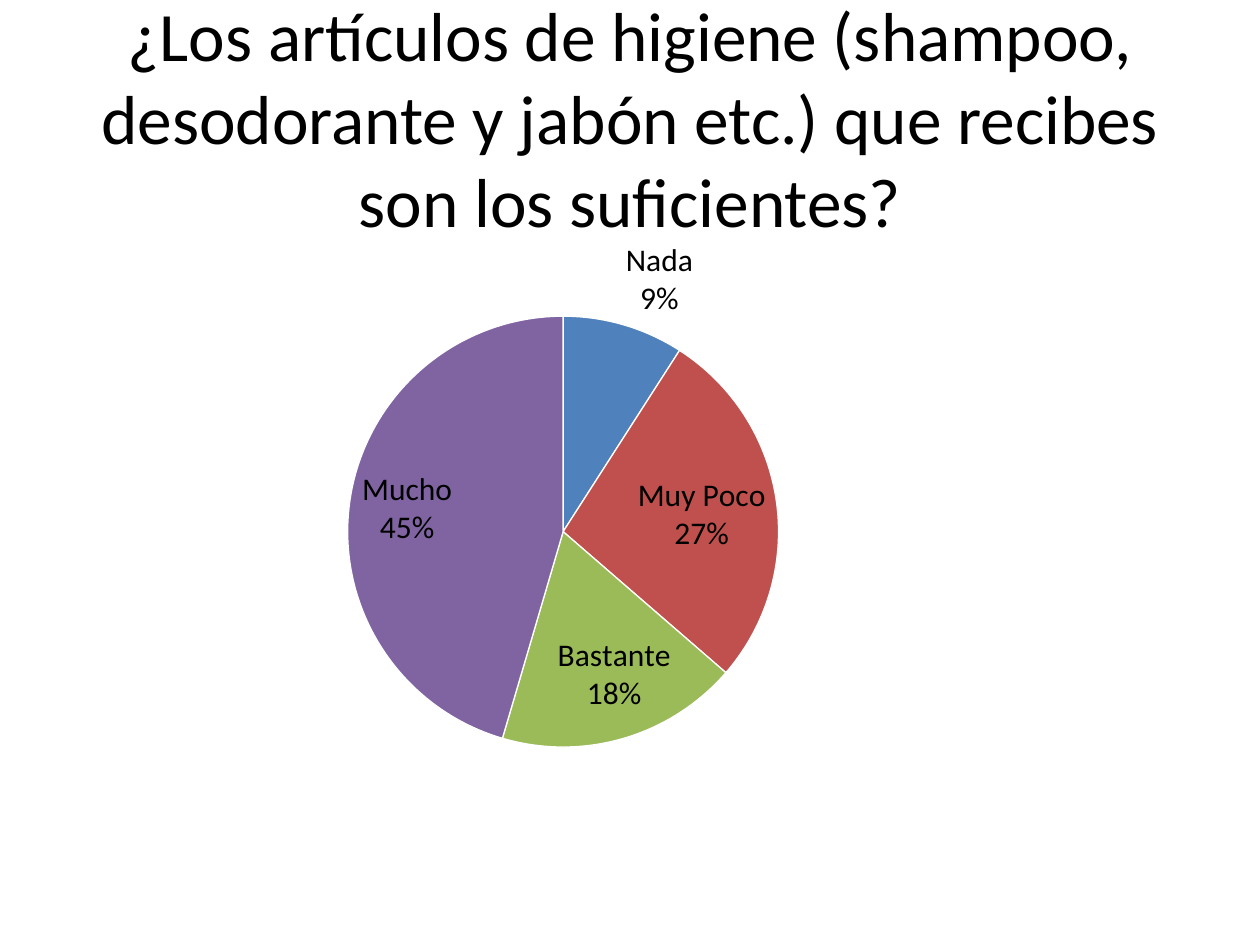
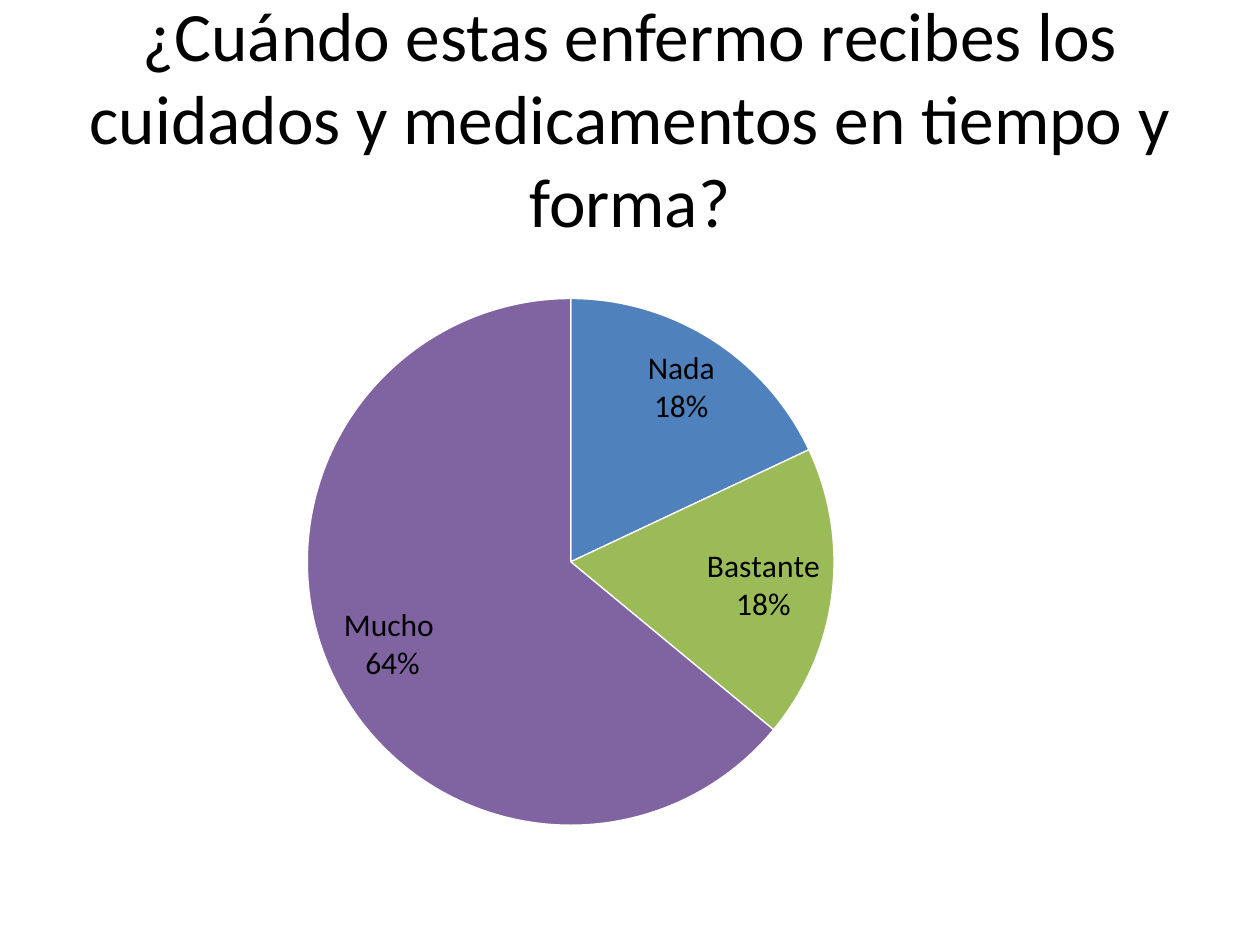
"""Build two survey slides, each a question over a pie chart of its answers."""
from dataclasses import dataclass
from typing import Any

from lxml import etree
from pptx import Presentation
from pptx.chart.data import CategoryChartData
from pptx.dml.color import RGBColor
from pptx.enum.chart import XL_CHART_TYPE, XL_LABEL_POSITION
from pptx.enum.text import MSO_ANCHOR, PP_ALIGN
from pptx.oxml.ns import qn
from pptx.util import Inches, Pt

PIE = XL_CHART_TYPE.PIE
BEST_FIT = XL_LABEL_POSITION.BEST_FIT
MIDDLE = MSO_ANCHOR.MIDDLE
CENTER = PP_ALIGN.CENTER

BLACK = RGBColor(0x00, 0x00, 0x00)
WHITE = RGBColor(0xFF, 0xFF, 0xFF)
BLUE = RGBColor(0x4F, 0x81, 0xBD)
RED = RGBColor(0xC0, 0x50, 0x4D)
GREEN = RGBColor(0x9B, 0xBB, 0x59)
PURPLE = RGBColor(0x80, 0x64, 0xA2)
SLICE_COLORS = (BLUE, RED, GREEN, PURPLE)

LEFT, WIDTH = 0.5, 9
TITLE_TOP, TITLE_HEIGHT = 0.3, 1.25
CHART_TOP, CHART_HEIGHT = 1.75, 4.95

TITLE_FONT = {"name": "Calibri", "size": Pt(39.6)}
LABEL_FONT = {"name": "Calibri", "size": Pt(18)}
TITLE_FRAME = {"word_wrap": True, "vertical_anchor": MIDDLE}
LABEL_FORMAT = {
    "show_category_name": True,
    "show_percentage": True,
    "show_value": False,
    "number_format": "0%",
    "number_format_is_linked": False,
    "position": BEST_FIT,
}


@dataclass(frozen=True)
class Question:
    """A survey question, its answers and the pie's place in inches."""

    title: str
    answers: tuple[str, ...]
    values: tuple[int, ...]
    center_x: float
    center_y: float
    radius: float


QUESTIONS = (
    Question(
        "¿Los artículos de higiene (shampoo, desodorante y jabón etc.) "
        "que recibes son los suficientes?",
        ("Nada", "Muy Poco", "Bastante", "Mucho"),
        (9, 27, 18, 45), 4.47, 4.22, 1.71,
    ),
    Question(
        "¿Cuándo estas enfermo recibes los cuidados y medicamentos "
        "en tiempo y forma?",
        ("Nada", "Muy Poco", "Bastante", "Mucho "),
        (18, 0, 18, 64), 4.53, 4.46, 2.09,
    ),
)


def apply(target: Any, values: dict[str, Any]) -> None:
    """Set each named attribute on the target."""
    for name, value in values.items():
        setattr(target, name, value)


def add_val(parent: Any, tag: str, value: Any) -> Any:
    """Append a chart element that holds one value."""
    child = etree.SubElement(parent, qn(tag))
    child.set("val", str(value))
    return child


def add_title(slide: Any, text: str) -> None:
    """Add the centred question."""
    sp = slide.shapes.add_textbox(
        Inches(LEFT), Inches(TITLE_TOP), Inches(WIDTH), Inches(TITLE_HEIGHT))
    tf = sp.text_frame
    apply(tf, TITLE_FRAME)
    p = tf.paragraphs[0]
    p.alignment = CENTER
    r = p.add_run()
    r.text = text
    apply(r.font, TITLE_FONT)
    r.font.color.rgb = BLACK


def place_pie(chart: Any, question: Question) -> None:
    """Fix the plot area to the square around the pie."""
    plot_area = chart.plots[0]._element.getparent()
    for old in plot_area.findall(qn("c:layout")):
        plot_area.remove(old)
    layout = etree.Element(qn("c:layout"))
    manual = etree.SubElement(layout, qn("c:manualLayout"))
    add_val(manual, "c:layoutTarget", "inner")
    add_val(manual, "c:xMode", "edge")
    add_val(manual, "c:yMode", "edge")
    add_val(manual, "c:x", (question.center_x - question.radius - LEFT) / WIDTH)
    add_val(manual, "c:y",
            (question.center_y - question.radius - CHART_TOP) / CHART_HEIGHT)
    add_val(manual, "c:w", 2 * question.radius / WIDTH)
    add_val(manual, "c:h", 2 * question.radius / CHART_HEIGHT)
    plot_area.insert(0, layout)


def label_slices(series: Any, values: tuple[int, ...]) -> None:
    """Label each slice with answer and share, leaving out empty ones."""
    labels = series.data_labels
    apply(labels, LABEL_FORMAT)
    apply(labels.font, LABEL_FONT)
    labels.font.color.rgb = BLACK
    element = labels._element
    separator = etree.Element(qn("c:separator"))
    separator.text = "\n"
    shown = element.findall(qn("c:showBubbleSize")) or element.findall(
        qn("c:showPercent"))
    shown[-1].addnext(separator)
    empty = [i for i, value in enumerate(values) if value == 0]
    for position, index in enumerate(empty):
        label = etree.Element(qn("c:dLbl"))
        add_val(label, "c:idx", index)
        add_val(label, "c:delete", 1)
        element.insert(position, label)


def add_pie(slide: Any, question: Question) -> None:
    """Add the pie chart of the answers."""
    data = CategoryChartData()
    data.categories = question.answers
    data.add_series("Series 1", question.values)
    chart = slide.shapes.add_chart(
        PIE, Inches(LEFT), Inches(CHART_TOP), Inches(WIDTH),
        Inches(CHART_HEIGHT), data).chart
    apply(chart, {"has_legend": False, "has_title": False})
    apply(chart.font, LABEL_FONT)
    chart.font.color.rgb = BLACK
    plot = chart.plots[0]
    plot.vary_by_categories = True
    series = plot.series[0]
    for i, color in enumerate(SLICE_COLORS):
        slice_format = series.points[i].format
        slice_format.fill.solid()
        slice_format.fill.fore_color.rgb = color
        slice_format.line.color.rgb = WHITE
        slice_format.line.width = Pt(0.75)
    label_slices(series, question.values)
    place_pie(chart, question)


def main() -> None:
    """Build and save the presentation."""
    prs = Presentation()
    prs.slide_width, prs.slide_height = Inches(10), Inches(7.5)
    for question in QUESTIONS:
        slide = prs.slides.add_slide(prs.slide_layouts[6])
        add_title(slide, question.title)
        add_pie(slide, question)
    prs.save("out.pptx")


if __name__ == "__main__":
    main()
